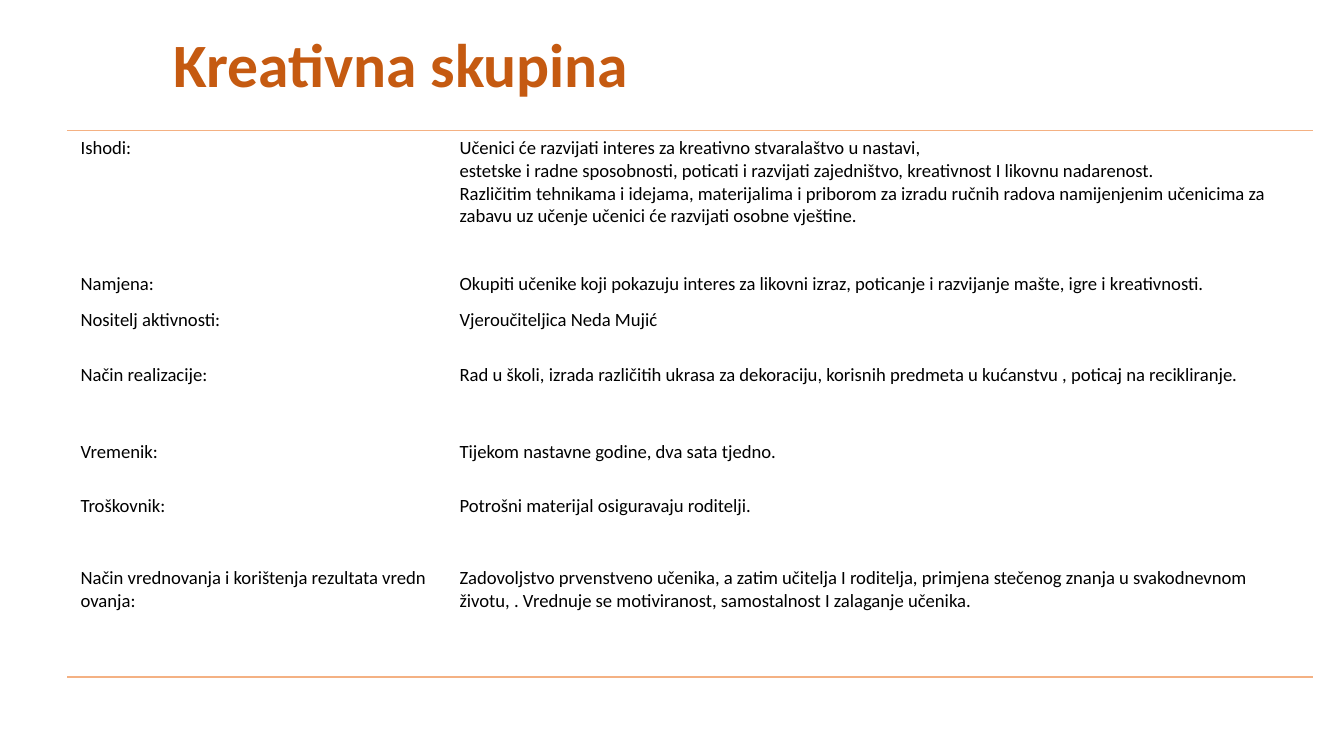
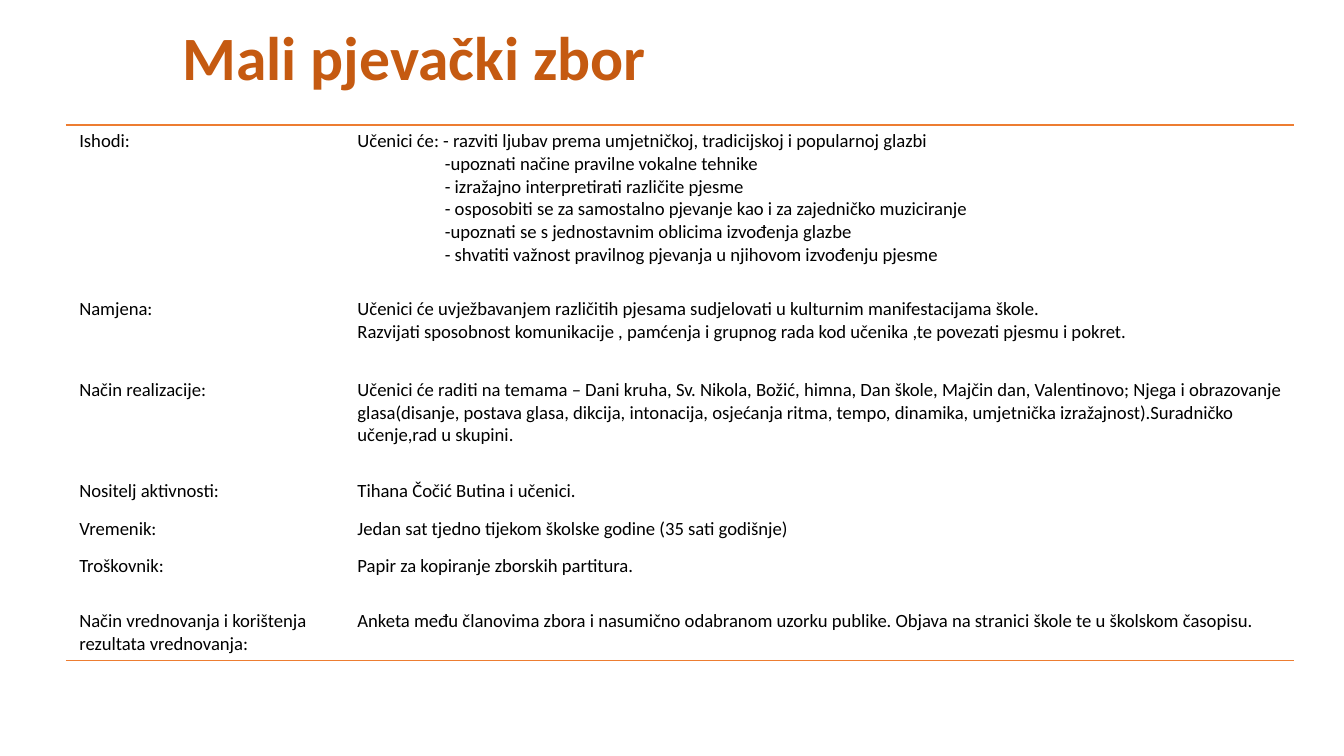
from dataclasses import dataclass

from pptx import Presentation
from pptx.dml.color import RGBColor
from pptx.enum.text import MSO_ANCHOR
from pptx.oxml import parse_xml
from pptx.oxml.ns import nsdecls
from pptx.util import Inches, Pt

COLORS = {
    "title": "C55A11",
    "text": "000000",
    "light_rule": "F4B183",
    "rule": "ED7D31",
}
FONT = "Calibri"


@dataclass
class Para:
    text: str
    indent: float = 0  # inches
    before: float = 0  # points


def unbroken(text):
    """Join the words with no-break spaces, so that lines fill to the edge."""
    return text.replace(" ", chr(160))


CREATIVE_ROWS = [
    (1.28,
     ["Ishodi:", Para("Namjena:", before=60.5)],
     ["Učenici će razvijati interes za kreativno stvaralaštvo u nastavi,",
      "estetske i radne sposobnosti, poticati i razvijati zajedništvo, "
      "kreativnost I likovnu nadarenost.",
      "Različitim tehnikama i idejama, materijalima i priborom za izradu ručnih "
      "radova namijenjenim učenicima za zabavu uz učenje učenici će razvijati "
      "osobne vještine.",
      Para("Okupiti učenike koji pokazuju interes za likovni izraz, poticanje i "
           "razvijanje mašte, igre i kreativnosti.", before=24.4)]),
    (0.41, ["Nositelj aktivnosti:"], ["Vjeroučiteljica Neda Mujić"]),
    (0.57, ["Način realizacije:"],
     ["Rad u školi, izrada različitih ukrasa za dekoraciju, korisnih predmeta u "
      "kućanstvu , poticaj na recikliranje."]),
    (0.4, ["Vremenik:"], ["Tijekom nastavne godine, dva sata tjedno."]),
    (0.54, ["Troškovnik:"], ["Potrošni materijal osiguravaju roditelji."]),
    (0.87, [unbroken("Način vrednovanja i korištenja rezultata vrednovanja:")],
     ["Zadovoljstvo prvenstveno učenika, a zatim učitelja I roditelja, primjena "
      "stečenog znanja u svakodnevnom životu, . Vrednuje se motiviranost, "
      "samostalnost I zalaganje učenika."]),
]

CHOIR_GOALS = [
    "-upoznati načine pravilne vokalne tehnike",
    "- izražajno interpretirati različite pjesme",
    "- osposobiti se za samostalno pjevanje kao i za zajedničko muziciranje",
    "-upoznati se s jednostavnim oblicima izvođenja glazbe",
    "- shvatiti važnost pravilnog pjevanja u njihovom izvođenju pjesme",
]

CHOIR_ROWS = [
    (1.25, ["Ishodi:"],
     ["Učenici će: - razviti ljubav prema umjetničkoj, tradicijskoj i popularnoj "
      "glazbi"] + [Para(goal, indent=0.65) for goal in CHOIR_GOALS]),
    (0.6, ["Namjena:"],
     ["Učenici će uvježbavanjem različitih pjesama sudjelovati u kulturnim "
      "manifestacijama škole.",
      "Razvijati sposobnost komunikacije , pamćenja i grupnog rada kod učenika "
      ",te povezati pjesmu i pokret."]),
    (0.75, ["Način realizacije:"],
     ["Učenici će raditi na temama – Dani kruha, Sv. Nikola, Božić, himna, Dan "
      "škole, Majčin dan, Valentinovo; Njega i obrazovanje glasa(disanje, postava "
      "glasa, dikcija, intonacija, osjećanja ritma, tempo, dinamika, umjetnička "
      "izražajnost).Suradničko učenje,rad u skupini."]),
    (0.28, ["Nositelj aktivnosti:"], ["Tihana Čočić Butina i učenici."]),
    (0.28, ["Vremenik:"],
     ["Jedan sat tjedno tijekom školske godine (35 sati godišnje)"]),
    (0.41, ["Troškovnik:"], ["Papir za kopiranje zborskih partitura."]),
    (0.41, ["Način vrednovanja i korištenja rezultata vrednovanja:"],
     ["Anketa među članovima zbora i nasumično odabranom uzorku publike. Objava "
      "na stranici škole te u školskom časopisu."]),
]


def set_font(p, size, color, bold=False):
    p.font.name = FONT
    p.font.size = Pt(size)
    p.font.bold = bold
    p.font.color.rgb = RGBColor.from_string(COLORS[color])


def add_title(slide, text, left, top, width, height):
    tb = slide.shapes.add_textbox(
        Inches(left), Inches(top), Inches(width), Inches(height))
    tf = tb.text_frame
    tf.word_wrap = True
    tf.vertical_anchor = MSO_ANCHOR.MIDDLE
    tf.margin_left = tf.margin_right = Inches(0.1)
    tf.margin_top = tf.margin_bottom = Inches(0.1)
    p = tf.paragraphs[0]
    p.text = text
    p.line_spacing = 0.9
    set_font(p, 33, "title", bold=True)


def set_borders(cell, ruled_sides, color):
    """Rule the given sides (of L, R, T, B) at 1 pt and clear the others."""
    tc_pr = cell._tc.get_or_add_tcPr()
    for i, side in enumerate("LRTB"):
        fill = "<a:noFill/>"
        if side in ruled_sides:
            fill = (f'<a:solidFill><a:srgbClr val="{COLORS[color]}"/>'
                    '</a:solidFill>')
        tc_pr.insert(i, parse_xml(
            f'<a:ln{side} {nsdecls("a")} w="{Pt(1)}">{fill}</a:ln{side}>'))


def fill_cell(cell, paras, margin):
    cell.fill.background()
    cell.margin_left = cell.margin_right = Inches(0.1)
    cell.margin_top = cell.margin_bottom = Inches(margin)
    tf = cell.text_frame
    for i, item in enumerate(paras):
        para = item if isinstance(item, Para) else Para(item)
        p = tf.paragraphs[0] if i == 0 else tf.add_paragraph()
        p.text = para.text
        if para.indent:
            p._p.get_or_add_pPr().set("marL", str(Inches(para.indent)))
        if para.before:
            p.space_before = Pt(para.before)
        set_font(p, 10, "text")


def add_plan_table(slide, rows, left, top, widths, margin, rule):
    """Add a label/description table ruled only above and below."""
    height = sum(row[0] for row in rows)
    table = slide.shapes.add_table(
        len(rows), len(widths), Inches(left), Inches(top),
        Inches(sum(widths)), Inches(height)).table
    table.first_row = table.horz_banding = False
    for col, width in zip(table.columns, widths):
        col.width = Inches(width)
    ruled = {0: "T", len(rows) - 1: "B"}
    for r, (row_height, *cells) in enumerate(rows):
        table.rows[r].height = Inches(row_height)
        for c, paras in enumerate(cells):
            cell = table.cell(r, c)
            fill_cell(cell, paras, margin)
            set_borders(cell, ruled.get(r, ""), rule)


def main():
    prs = Presentation()
    prs.slide_width = Inches(10)
    prs.slide_height = prs.slide_width * 9 // 16
    blank = prs.slide_layouts[6]

    creative = prs.slides.add_slide(blank)
    add_title(creative, "Kreativna skupina", 1.19, 0.04, 9, 0.93)
    add_plan_table(creative, CREATIVE_ROWS, 0.5, 0.97, (2.82, 6.45), 0.05,
                   "light_rule")

    choir = prs.slides.add_slide(blank)
    add_plan_table(choir, CHOIR_ROWS, 0.49, 0.93, (2.07, 7.07), 0.04, "rule")
    add_title(choir, "Mali pjevački zbor", 1.26, -0.02, 7.62, 0.94)

    prs.save("out.pptx")


if __name__ == "__main__":
    main()
